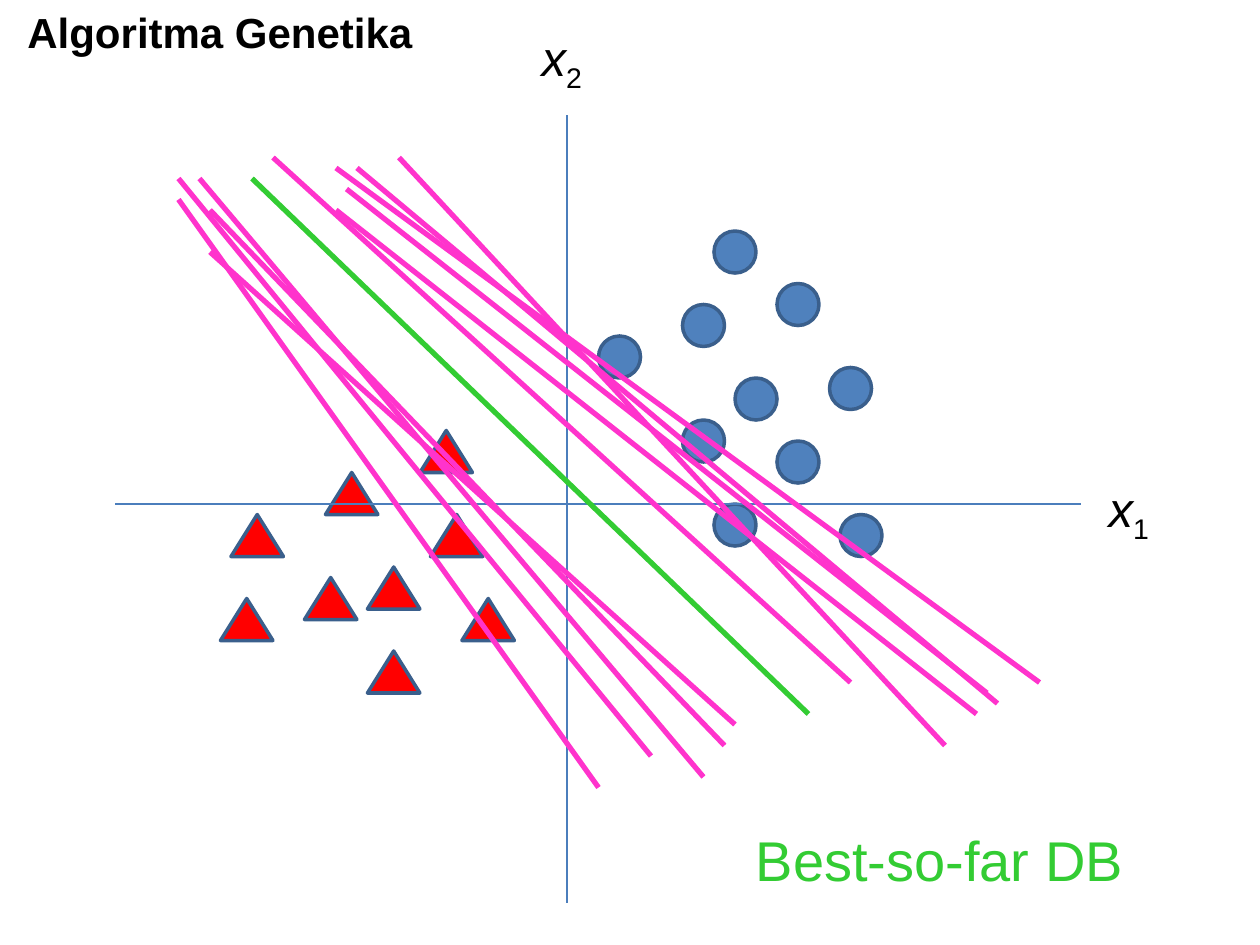
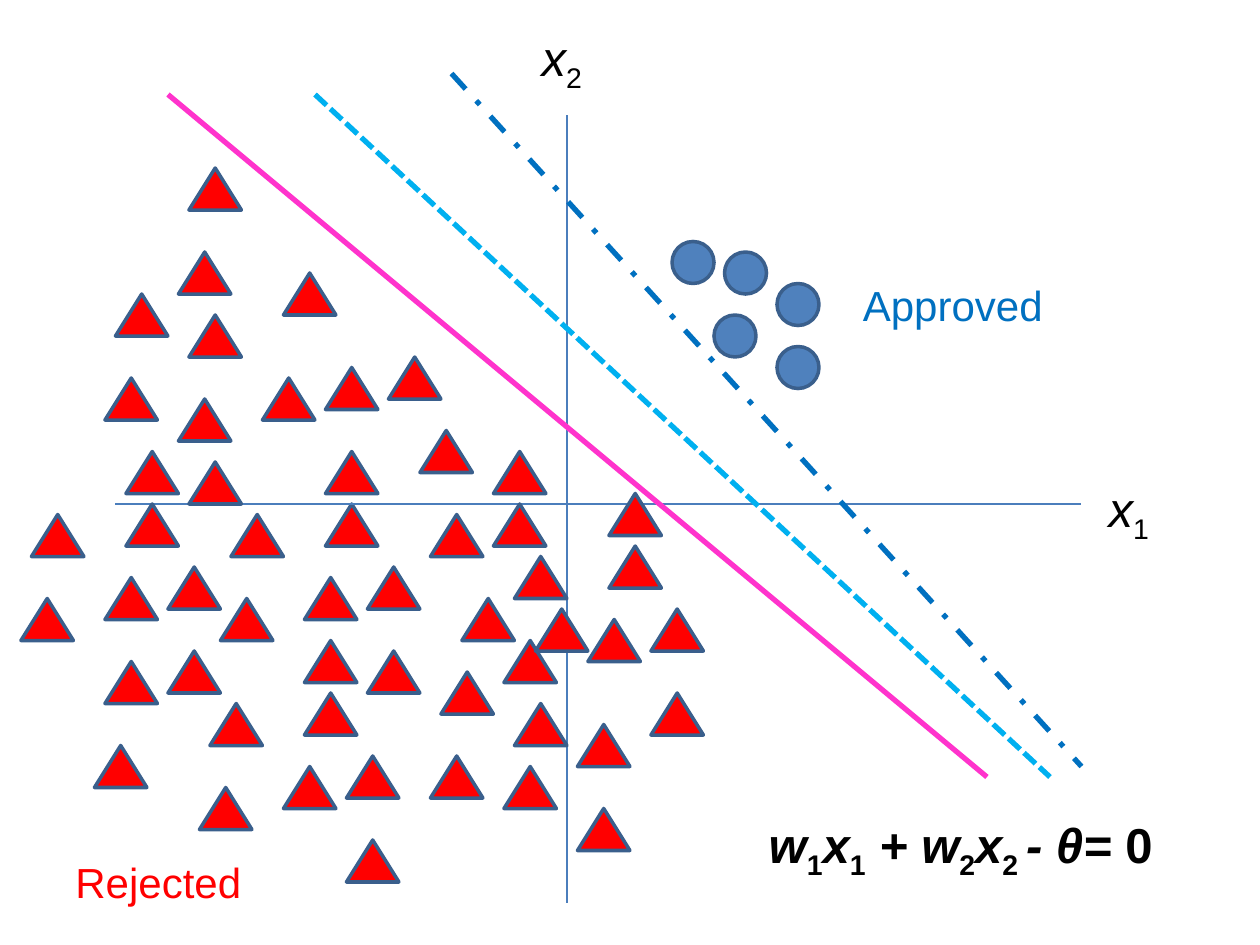
from lxml.etree import SubElement
from pptx import Presentation
from pptx.dml.color import RGBColor as Rgb
from pptx.enum.dml import MSO_LINE as Dash
from pptx.enum.shapes import MSO_CONNECTOR as Conn, MSO_SHAPE as Kind
from pptx.enum.text import MSO_ANCHOR as Anchor, MSO_AUTO_SIZE as Fit, PP_ALIGN as Align
from pptx.oxml.ns import qn
from pptx.util import Pt

SCALE = 9525
CELL = 8
PAGE = (0, 0, 960, 720)

BLACK, RED, BLUE, EDGE = "000000", "FF0000", "4F81BD", "3A5F8C"
AXIS, PINK, GREEN = "4B7EBC", "FF33CC", "33CC33"
CYAN, NAVY = "00B0F0", "0070C0"

MARKS = {
    "circle": (Kind.OVAL, 4, 4, BLUE),
    "wedge": (Kind.ISOSCELES_TRIANGLE, 5, 4, RED),
}

BASE = [(29, 55), (35, 54), (44, 57), (40, 41), (22, 49), (41, 49), (21, 57), (35, 62)]

GOOD_GA = [
    (65, 29), (74, 27), (80, 49), (79, 35), (68, 48),
    (57, 32), (68, 22), (74, 42), (65, 40), (70, 36),
]
TRIES = [
    (19, 17, 67, 74), (33, 18, 94, 66), (20, 20, 69, 71), (38, 15, 90, 71),
    (17, 17, 62, 72), (34, 16, 95, 67), (32, 20, 93, 68), (32, 16, 99, 65),
    (20, 24, 70, 69), (17, 19, 57, 75), (26, 15, 81, 65),
]
BEST = (24, 17, 77, 68)

GOOD = [(68, 30), (74, 27), (74, 33), (69, 24), (64, 23)]
BAD = [
    (25, 36), (31, 35), (18, 30), (27, 26), (17, 38), (31, 43), (56, 59), (62, 58),
    (49, 53), (58, 52), (48, 61), (62, 66), (58, 47), (27, 73), (33, 72), (20, 67),
    (29, 66), (19, 75), (33, 80), (29, 61), (48, 73), (55, 69), (42, 64), (49, 67),
    (41, 72), (55, 77), (51, 58), (18, 44), (10, 55), (16, 54), (3, 49), (12, 48),
    (2, 57), (16, 62), (12, 43), (11, 28), (10, 36), (10, 63), (9, 71), (18, 16),
    (17, 24), (37, 34), (47, 43), (47, 48),
]
RULE = [
    ("w", "i"), ("1", "s"), ("x", "i"), ("1", "s"), (" + w", "i"), ("2", "s"),
    ("x", "i"), ("2 ", "s"), ("- θ= ", "i"), ("0", ""),
]


def px(*nums):
    """Turn px lengths into EMU."""
    return [num * SCALE for num in nums]


def rgb(code):
    """Turn a hex string into a colour."""
    return Rgb.from_string(code)


def apply(item, **form):
    """Set each format value on the item."""
    for key, value in form.items():
        setattr(item, key, value)


def stroke(line, code, width, dash=None):
    """Format a line."""
    line.color.rgb = rgb(code)
    apply(line, width=Pt(width), dash_style=dash)


def fill_text(shape, runs, size, code, bold=False, align=Align.CENTER, wrap=True):
    """Write runs marked i for italic or s for subscript."""
    frame = shape.text_frame
    apply(frame, word_wrap=wrap, auto_size=Fit.SHAPE_TO_FIT_TEXT,
          vertical_anchor=Anchor.TOP)
    para = frame.paragraphs[0]
    para.alignment = align
    for text, mark in runs:
        run = para.add_run()
        run.text = text
        apply(run.font, name="Arial", size=Pt(size), bold=bold, italic=mark == "i")
        run.font.color.rgb = rgb(code)
        if mark == "s":
            run._r.get_or_add_rPr().set("baseline", "-25000")


def label(slide, box, spot, runs, size, code, **form):
    """Add a text box at a spot in the box."""
    left, top, wide, high = spot
    shape = slide.shapes.add_textbox(*px(box[0] + left, box[1] + top, wide, high))
    fill_text(shape, runs, size, code, **form)


def draw_line(slide, box, ends, code, width=3, dash=None):
    """Draw a line between two grid points of the box."""
    points = [box[i % 2] + end * CELL for i, end in enumerate(ends)]
    link = slide.shapes.add_connector(Conn.STRAIGHT, *px(*points))
    stroke(link.line, code, width, dash)
    SubElement(link._element.spPr, qn("a:effectLst"))


def scatter(slide, box, name, spots):
    """Place one kind of mark on grid points of the box."""
    kind, wide, high, code = MARKS[name]
    for col, row in spots:
        shape = slide.shapes.add_shape(kind, *px(
            box[0] + col * CELL, box[1] + row * CELL, wide * CELL, high * CELL))
        shape.shadow.inherit = False
        shape.fill.solid()
        shape.fill.fore_color.rgb = rgb(code)
        stroke(shape.line, EDGE, 2)


def draw_plot(slide, box, good, extra):
    """Draw the marks, both axes and their names."""
    scatter(slide, box, "circle", good)
    scatter(slide, box, "wedge", BASE + [extra])
    for ends in ((11, 48, 103, 48), (54, 11, 54, 86)):
        draw_line(slide, box, ends, AXIS, 0.75)
    for digit, left, top in (("1", 832, 360), ("2", 400, 16)):
        label(slide, box, (left, top, 56, 55), [("x", "i"), (digit, "s")], 28, BLACK)


def search_slide(deck, box):
    """Build the slide of the genetic search."""
    slide = deck.slides.add_slide(deck.slide_layouts[5])
    title = slide.shapes.title
    left, top, wide, high = px(box[0], box[1], 344, 48)
    apply(title, left=left, top=top, width=wide, height=high)
    fill_text(title, [("Algoritma Genetika ", "")], 24, BLACK, bold=True)
    draw_plot(slide, box, GOOD_GA, (31, 45))
    label(slide, box, (528, 624, 376, 61), [("Best-so-far DB", "")], 32, GREEN)
    for ends in TRIES:
        draw_line(slide, box, ends, PINK)
    draw_line(slide, box, BEST, GREEN)


def choice_slide(deck, box):
    """Build the slide of the three decision lines."""
    slide = deck.slides.add_slide(deck.slide_layouts[6])
    draw_plot(slide, box, GOOD, (31, 48))
    label(slide, box, (544, 616, 376, 55), RULE, 28, BLACK, bold=True)
    draw_line(slide, box, (16, 9, 94, 74), PINK)
    draw_line(slide, box, (30, 9, 100, 74), CYAN, dash=Dash.SQUARE_DOT)
    scatter(slide, box, "wedge", BAD)
    for text, spot, code in (
        ("Approved", (648, 208, 157, 48), NAVY),
        ("Rejected", (48, 648, 147, 48), RED),
    ):
        label(slide, box, spot, [(text, "")], 24, code, align=Align.LEFT, wrap=False)
    draw_line(slide, box, (43, 7, 103, 73), NAVY, dash=Dash.DASH_DOT)


def main():
    """Build and save the deck."""
    deck = Presentation()
    wide, high = px(*PAGE[2:])
    apply(deck, slide_width=wide, slide_height=high)
    search_slide(deck, PAGE)
    choice_slide(deck, PAGE)
    deck.save("out.pptx")


if __name__ == "__main__":
    main()
